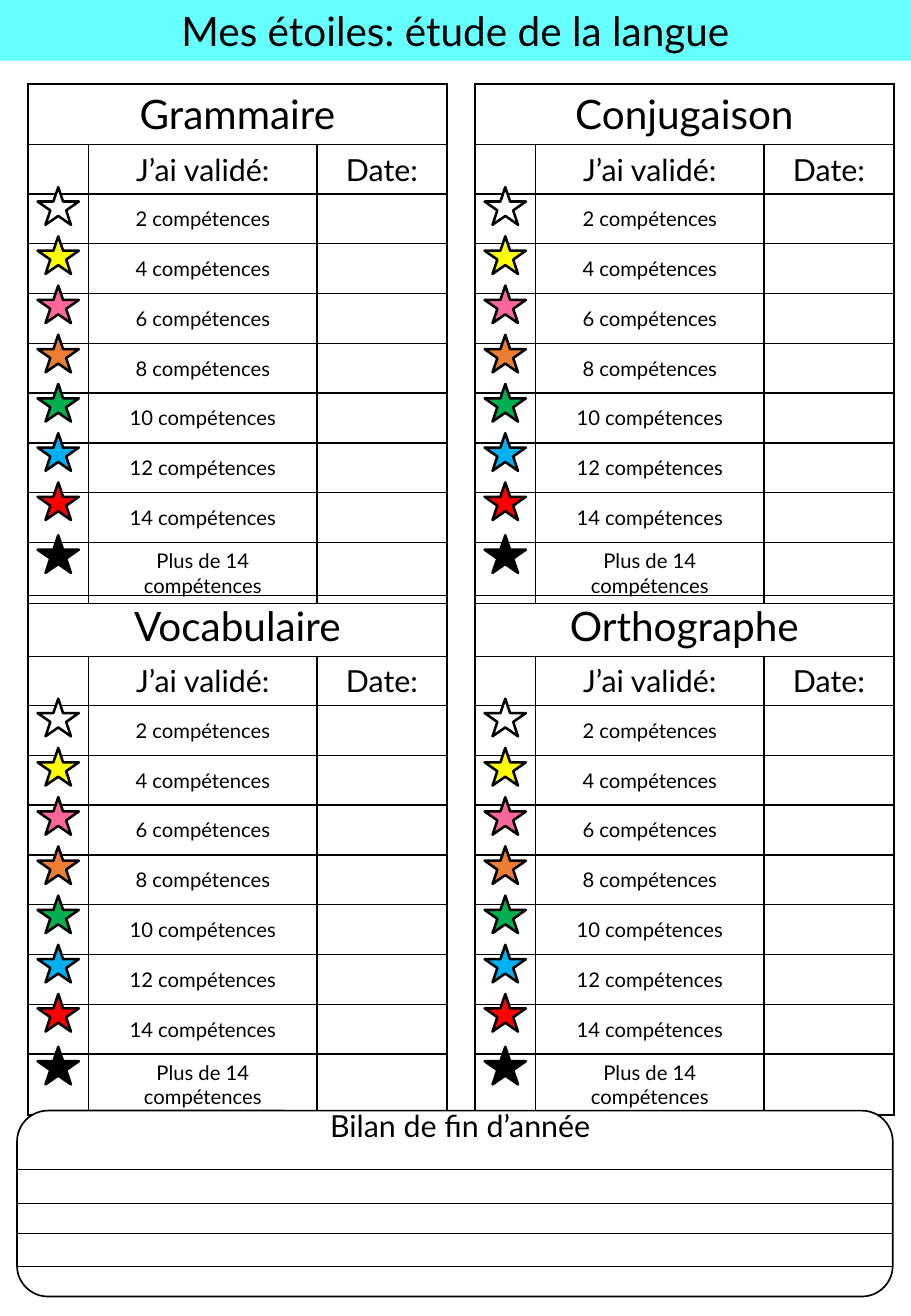
from dataclasses import dataclass

from lxml import etree
from pptx import Presentation
from pptx.dml.color import RGBColor
from pptx.enum import shapes, text
from pptx.oxml.ns import qn
from pptx.util import Inches, Pt


@dataclass(frozen=True)
class Theme:
    font: str = "Lato"
    ink: str = "000000"
    paper: str = "FFFFFF"
    banner: str = "66FFFF"
    title_size: float = 24
    heading_size: float = 18
    body_size: float = 12
    star_line: float = 1.5
    border: float = 1
    rule: float = 0.5


@dataclass(frozen=True)
class Level:
    label: str
    colour: str


@dataclass(frozen=True)
class Panel:
    title: str
    left: float
    top: float


THEME = Theme()
LEVELS = [
    Level("2 compétences", "FFFFFF"),
    Level("4 compétences", "FFFF00"),
    Level("6 compétences", "FF6699"),
    Level("8 compétences", "ED7D31"),
    Level("10 compétences", "00B050"),
    Level("12 compétences", "00B0F0"),
    Level("14 compétences", "FF0000"),
    Level("Plus de 14 compétences", "000000"),
]
PANELS = [
    Panel("Grammaire", 0.23, 0.69),
    Panel("Conjugaison", 3.91, 0.69),
    Panel("Vocabulaire", 0.23, 4.9),
    Panel("Orthographe", 3.91, 4.9),
]
COLUMN_WIDTHS = [0.5, 1.88, 1.07]
HEADER_HEIGHT, LEVEL_HEIGHT, TABLE_HEIGHT = 0.32, 0.41, 4.07
STAR_LEFT, STAR_TOP, STAR_STEP, LAST_STAR_DROP = 0.08, 0.85, 0.405, 0.03
NOTES_LEFT, NOTES_WIDTH = 0.14, 7.21
RULE_TOPS = [9.62, 9.9, 10.15, 10.42]


def rgb(colour: str) -> RGBColor:
    return RGBColor.from_string(colour)


def write(frame, content: str, *, size: float, align=text.PP_ALIGN.CENTER) -> None:
    paragraph = frame.paragraphs[0]
    paragraph.alignment = align
    run = paragraph.add_run()
    run.text = content
    run.font.name = THEME.font
    run.font.size = Pt(size)
    run.font.bold = False
    run.font.color.rgb = rgb(THEME.ink)


def add_outlined_shape(slide, kind, left: float, top: float, width: float, height: float,
                       *, fill: str, line: float):
    shape = slide.shapes.add_shape(kind, Inches(left), Inches(top), Inches(width), Inches(height))
    shape.shadow.inherit = False
    shape.fill.solid()
    shape.fill.fore_color.rgb = rgb(fill)
    shape.line.color.rgb = rgb(THEME.ink)
    shape.line.width = Pt(line)
    return shape


def format_cell(cell) -> None:
    """Give the cell a thin border on every side and no fill."""
    properties = cell._tc.get_or_add_tcPr()
    for side in ("lnL", "lnR", "lnT", "lnB"):
        border = etree.SubElement(properties, qn(f"a:{side}"), w=str(Pt(THEME.border)))
        solid = etree.SubElement(border, qn("a:solidFill"))
        etree.SubElement(solid, qn("a:srgbClr"), val=THEME.ink)
    cell.fill.background()


def add_panel_table(slide, panel: Panel) -> None:
    row_count = len(LEVELS) + 2
    frame = slide.shapes.add_table(row_count, len(COLUMN_WIDTHS), Inches(panel.left),
                                   Inches(panel.top), Inches(sum(COLUMN_WIDTHS)),
                                   Inches(TABLE_HEIGHT))
    table = frame.table
    table.first_row = table.horz_banding = False
    for column, width in zip(table.columns, COLUMN_WIDTHS):
        column.width = Inches(width)
    for index, row in enumerate(table.rows):
        row.height = Inches(HEADER_HEIGHT if index < 2 else LEVEL_HEIGHT)
        for cell in row.cells:
            format_cell(cell)
            if index:
                cell.vertical_anchor = text.MSO_ANCHOR.MIDDLE
    frame.height = Inches(TABLE_HEIGHT)

    table.cell(0, 0).merge(table.cell(0, 2))
    write(table.cell(0, 0).text_frame, panel.title, size=THEME.title_size)
    for column, heading in enumerate(("J’ai validé:", "Date:"), start=1):
        write(table.cell(1, column).text_frame, heading, size=THEME.heading_size)
    for row, level in enumerate(LEVELS, start=2):
        write(table.cell(row, 1).text_frame, level.label, size=THEME.body_size)


def add_stars(slide, panel: Panel) -> None:
    for index, level in enumerate(LEVELS):
        drop = LAST_STAR_DROP if level is LEVELS[-1] else 0
        top = panel.top + STAR_TOP + index * STAR_STEP + drop
        add_outlined_shape(slide, shapes.MSO_SHAPE.STAR_5_POINT, panel.left + STAR_LEFT, top,
                           0.34, 0.31, fill=level.colour, line=THEME.star_line)


def add_title(slide) -> None:
    title = slide.shapes.title
    title.left, title.top = Inches(0), Inches(0)
    title.width, title.height = Inches(7.5), Inches(0.5)
    title.fill.solid()
    title.fill.fore_color.rgb = rgb(THEME.banner)
    title.text_frame.vertical_anchor = text.MSO_ANCHOR.MIDDLE
    write(title.text_frame, "Mes étoiles: étude de la langue", size=THEME.title_size)


def add_year_review(slide) -> None:
    add_outlined_shape(slide, shapes.MSO_SHAPE.ROUNDED_RECTANGLE, NOTES_LEFT, 9.14,
                       NOTES_WIDTH, 1.53, fill=THEME.paper, line=THEME.border)
    heading = slide.shapes.add_textbox(Inches(2.62), Inches(9.06), Inches(2.57), Inches(0.4))
    heading.text_frame.word_wrap = True
    write(heading.text_frame, "Bilan de fin d’année", size=THEME.heading_size,
          align=text.PP_ALIGN.LEFT)
    for top in RULE_TOPS:
        rule = slide.shapes.add_connector(shapes.MSO_CONNECTOR.STRAIGHT, Inches(NOTES_LEFT),
                                          Inches(top), Inches(NOTES_LEFT + NOTES_WIDTH),
                                          Inches(top))
        rule.line.color.rgb = rgb(THEME.ink)
        rule.line.width = Pt(THEME.rule)
        etree.SubElement(rule._element.spPr, qn("a:effectLst"))


def main() -> None:
    presentation = Presentation()
    presentation.slide_width, presentation.slide_height = Inches(7.5), Inches(10.83)
    slide = presentation.slides.add_slide(presentation.slide_layouts.get_by_name("Title Only"))
    add_title(slide)
    for panel in PANELS:
        add_panel_table(slide, panel)
        add_stars(slide, panel)
    add_year_review(slide)
    presentation.save("out.pptx")


if __name__ == "__main__":
    main()
